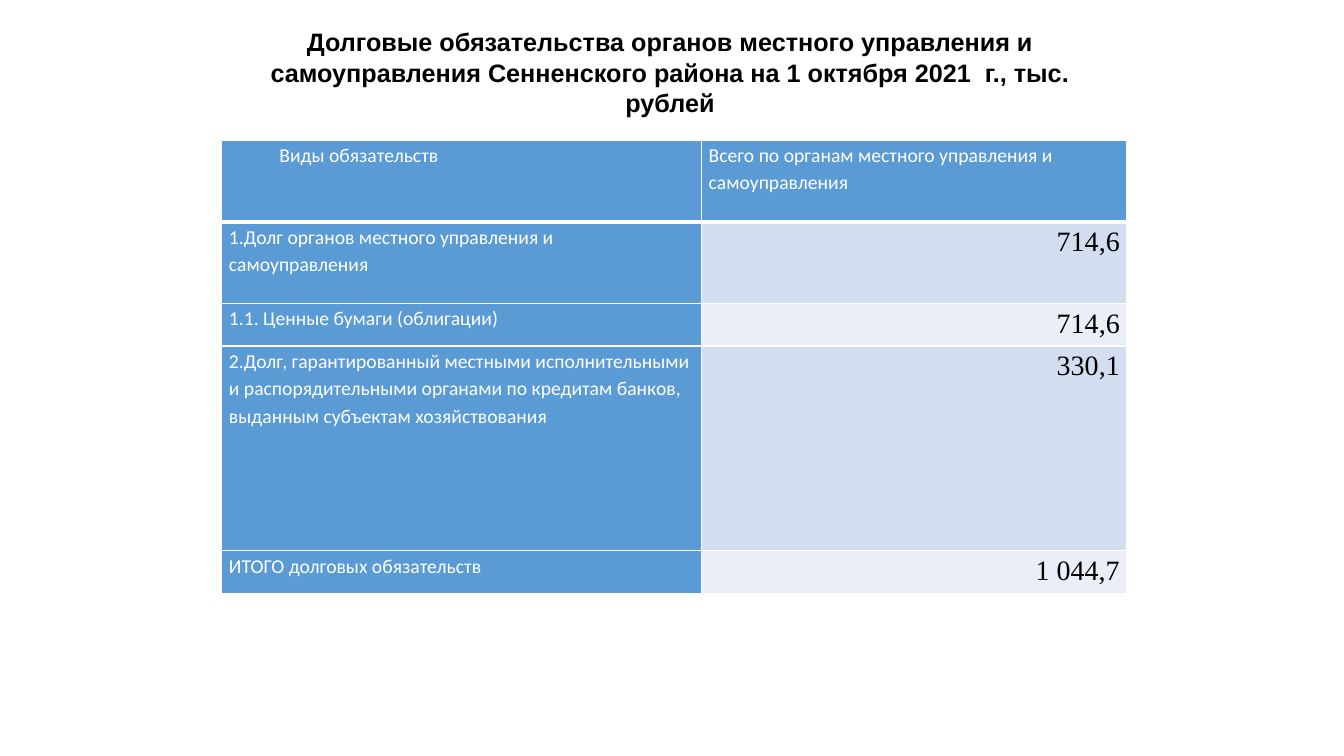
from lxml.etree import SubElement
from pptx import Presentation
from pptx.dml.color import RGBColor
from pptx.enum.text import MSO_ANCHOR, PP_ALIGN
from pptx.oxml.ns import qn
from pptx.util import Cm, Pt

WHITE, BLACK, BLUE = "FFFFFF", "000000", "5B9BD5"
BANDS = ["D2DEEF", "EAEFF7"]
LABEL = {"name": "Calibri", "size": Pt(14), "bold": False}
AMOUNT = {"name": "Times New Roman", "size": Pt(20), "bold": False}
HEADING = {"name": "Arial", "size": Pt(18), "bold": True}

TITLE = ("Долговые обязательства органов местного управления и самоуправления "
         "Сенненского района на 1 октября 2021  г., тыс. рублей")
DEBTS = [
    ("Виды обязательств", "Всего по органам местного управления и самоуправления"),
    ("1.Долг органов местного управления и самоуправления", "714,6"),
    ("1.1. Ценные бумаги (облигации)", "\N{NO-BREAK SPACE}714,6"),
    ("2.Долг, гарантированный местными исполнительными и распорядительными "
     "органами по кредитам банков, выданным субъектам хозяйствования", "330,1"),
    ("ИТОГО долговых обязательств", "1\N{NO-BREAK SPACE}044,7"),
]
COLUMN_WIDTHS = [12.09, 10.72]
ROW_HEIGHTS = [2.06, 2.06, 1.07, 5.16, 1.07]


def color(code):
    return RGBColor.from_string(code)


def set_all(target, values):
    for name, value in values.items():
        setattr(target, name, value)


def write(frame, wording, style, ink, **layout):
    paragraph = frame.paragraphs[0]
    set_all(paragraph, layout)
    run = paragraph.add_run()
    run.text = wording
    set_all(run.font, style)
    run.font.color.rgb = color(ink)
    return paragraph


def add_title(slide, left, top, width, height):
    frame = slide.shapes.add_textbox(Cm(left), Cm(top), Cm(width), Cm(height)).text_frame
    set_all(frame, {"word_wrap": True, "vertical_anchor": MSO_ANCHOR.MIDDLE})
    write(frame, TITLE, HEADING, BLACK, alignment=PP_ALIGN.CENTER)


def draw_borders(cell, bottom_width):
    properties = cell._tc.get_or_add_tcPr()
    for side, width in {"L": 1, "R": 1, "T": 1, "B": bottom_width}.items():
        line = SubElement(properties, qn(f"a:ln{side}"), w=str(Pt(width)))
        fill = SubElement(line, qn("a:solidFill"))
        SubElement(fill, qn("a:srgbClr"), val=WHITE)


def add_debt_table(slide, left, top):
    table = slide.shapes.add_table(
        len(DEBTS), len(COLUMN_WIDTHS), Cm(left), Cm(top),
        Cm(sum(COLUMN_WIDTHS)), Cm(sum(ROW_HEIGHTS))).table
    set_all(table, {"first_row": False, "horz_banding": False})
    for column, width in zip(table.columns, COLUMN_WIDTHS):
        column.width = Cm(width)
    for index, (row, height, debt) in enumerate(zip(table.rows, ROW_HEIGHTS, DEBTS)):
        row.height = Cm(height)
        for position, (cell, wording) in enumerate(zip(row.cells, debt)):
            is_amount = index > 0 and position == 1
            set_all(cell, {"margin_left": Cm(0.18), "margin_right": Cm(0.18),
                           "margin_top": 0, "margin_bottom": 0})
            draw_borders(cell, 1 if index else 3)
            cell.fill.solid()
            cell.fill.fore_color.rgb = color(BANDS[(index - 1) % 2] if is_amount else BLUE)
            paragraph = write(
                cell.text_frame, wording,
                AMOUNT if is_amount else LABEL, BLACK if is_amount else WHITE,
                alignment=PP_ALIGN.RIGHT if is_amount else PP_ALIGN.LEFT,
                line_spacing=1.15)
            if index == position == 0:
                paragraph._p.get_or_add_pPr().set("marL", str(Cm(1.27)))


def main():
    deck = Presentation()
    set_all(deck, {"slide_width": Cm(33.87), "slide_height": Cm(19.05)})
    slide = deck.slides.add_slide(deck.slide_layouts[6])
    add_debt_table(slide, 5.59, 3.53)
    add_title(slide, 5.38, 0.53, 23.01, 2.57)
    deck.save("out.pptx")


if __name__ == "__main__":
    main()
